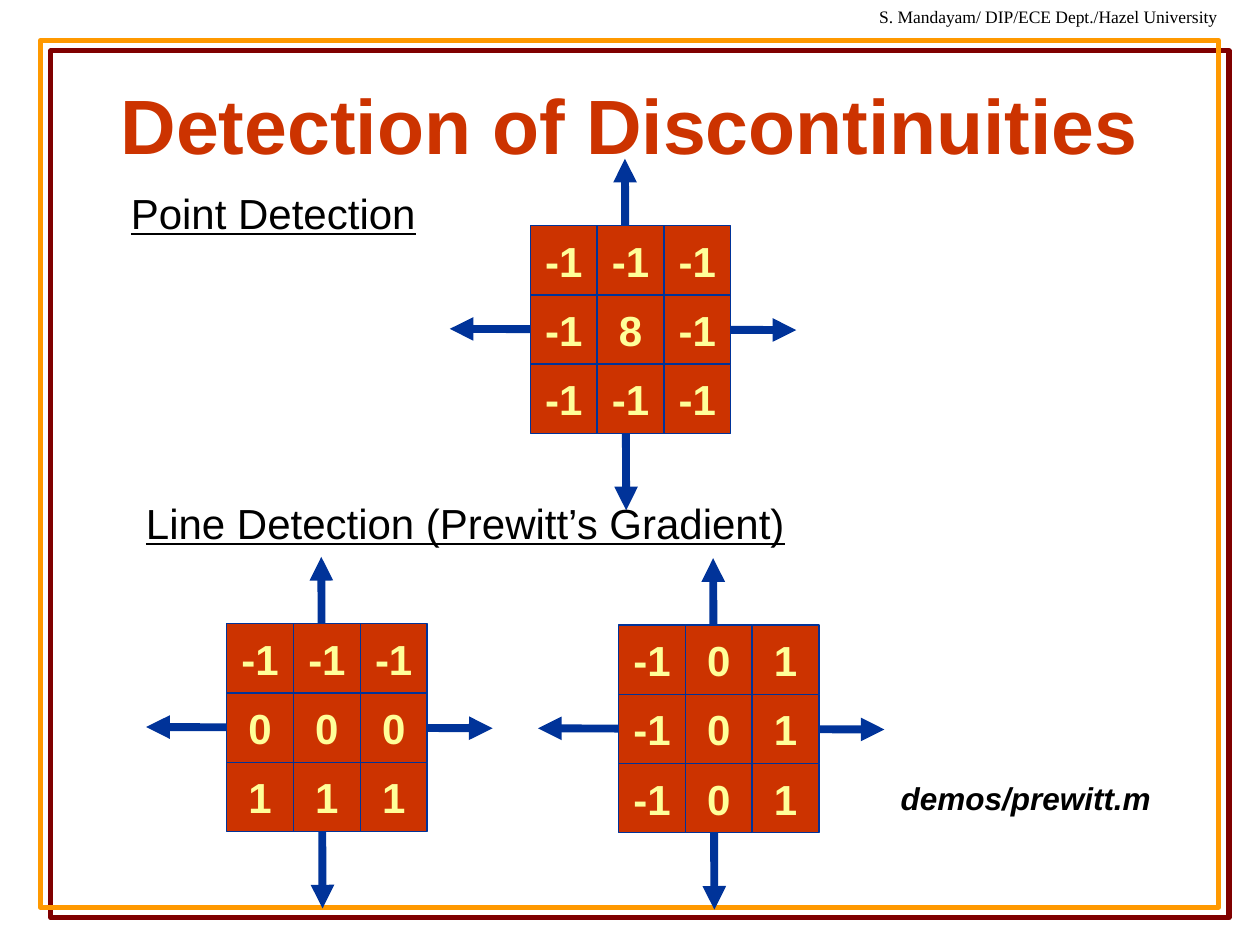
from dataclasses import dataclass

from lxml.etree import SubElement
from pptx import Presentation
from pptx.dml.color import RGBColor
from pptx.enum.shapes import MSO_CONNECTOR, MSO_SHAPE
from pptx.enum.text import MSO_ANCHOR, MSO_AUTO_SIZE, PP_ALIGN
from pptx.oxml.ns import qn
from pptx.util import Inches, Pt


@dataclass(frozen=True)
class Theme:
    accent: str = "CC3300"
    digit: str = "FFFF99"
    axis: str = "003399"
    ink: str = "000000"
    frame: str = "FF9900"
    frame_shadow: str = "800000"
    sans: str = "Arial"
    serif: str = "Times New Roman"
    title: float = 44
    body: float = 24
    note: float = 18
    credit: float = 10


def write(tf, text, font, size, color, align=PP_ALIGN.LEFT, anchor=MSO_ANCHOR.TOP,
          wrap=False, bold=False, italic=False, underline=False, indent=0):
    tf.word_wrap = wrap
    tf.vertical_anchor = anchor
    p = tf.paragraphs[0]
    p.alignment = align
    if indent:
        p._p.get_or_add_pPr().set("marL", str(Inches(indent)))
    r = p.add_run()
    r.text = text
    r.font.name = font
    r.font.size = Pt(size)
    r.font.color.rgb = RGBColor.from_string(color)
    r.font.bold = bold
    r.font.italic = italic
    r.font.underline = underline


class SlideBuilder:
    cell_w, cell_h = 0.53, 0.55

    def __init__(self, slide, theme):
        self.s = slide
        self.theme = theme

    def frame(self, left, top, width, height):
        t = self.theme
        sp = self.s.shapes.add_shape(MSO_SHAPE.RECTANGLE, Inches(left), Inches(top),
                                     Inches(width), Inches(height))
        sp.fill.background()
        sp.line.color.rgb = RGBColor.from_string(t.frame)
        sp.line.width = Pt(3)
        effects = SubElement(sp._element.spPr, qn("a:effectLst"))
        shadow = SubElement(effects, qn("a:outerShdw"), dist=str(Pt(8.5)),
                            dir="2700000", algn="ctr", rotWithShape="0")
        SubElement(shadow, qn("a:srgbClr"), val=t.frame_shadow)

    def title(self, text, left, top, width, height):
        t = self.theme
        sp = self.s.shapes.title
        sp.left, sp.top, sp.width, sp.height = map(Inches, (left, top, width, height))
        write(sp.text_frame, text, t.sans, t.title, t.accent, align=PP_ALIGN.CENTER,
              anchor=MSO_ANCHOR.MIDDLE, wrap=True, bold=True)
        sp.text_frame.auto_size = MSO_AUTO_SIZE.NONE

    def text(self, text, left, top, width, height, size, font=None, **fmt):
        t = self.theme
        tf = self.s.shapes.add_textbox(Inches(left), Inches(top),
                                       Inches(width), Inches(height)).text_frame
        write(tf, text, font or t.sans, size, t.ink, **fmt)
        tf.auto_size = MSO_AUTO_SIZE.SHAPE_TO_FIT_TEXT

    def axis(self, shapes, x1, y1, x2, y2):
        line = shapes.add_connector(MSO_CONNECTOR.STRAIGHT, Inches(x1), Inches(y1),
                                    Inches(x2), Inches(y2))
        line.line.color.rgb = RGBColor.from_string(self.theme.axis)
        line.line.width = Pt(4.5)
        ln = line.line._get_or_add_ln()
        for end in ("a:headEnd", "a:tailEnd"):
            SubElement(ln, qn(end), type="triangle")
        SubElement(line._element.spPr, qn("a:effectLst"))

    def cell(self, shapes, text, left, top):
        t = self.theme
        sp = shapes.add_shape(MSO_SHAPE.RECTANGLE, Inches(left), Inches(top),
                              Inches(self.cell_w), Inches(self.cell_h))
        sp.shadow.inherit = False
        sp.fill.solid()
        sp.fill.fore_color.rgb = RGBColor.from_string(t.accent)
        sp.line.color.rgb = RGBColor.from_string(t.axis)
        sp.line.width = Pt(0.75)
        write(sp.text_frame, text, t.sans, t.body, t.digit, align=PP_ALIGN.CENTER,
              anchor=MSO_ANCHOR.MIDDLE, bold=True)

    def kernel(self, rows, left, top):
        shapes = self.s.shapes.add_group_shape().shapes
        self.axis(shapes, left + 0.75, top - 0.53, left + 0.76, top + 2.26)
        self.axis(shapes, left - 0.64, top + 0.82, left + 2.11, top + 0.83)
        for i, row in enumerate(rows):
            for j, value in enumerate(row):
                self.cell(shapes, str(value), left + j * self.cell_w,
                          top + i * self.cell_h)


def main():
    prs = Presentation()
    prs.slide_width, prs.slide_height = Inches(10), Inches(7.5)
    theme = Theme()
    b = SlideBuilder(prs.slides.add_slide(prs.slide_layouts[5]), theme)

    b.frame(0.32, 0.32, 9.35, 6.88)
    b.text("S. Mandayam/ DIP/ECE Dept./Hazel University", 6.88, 0, 2.97, 0.27,
           theme.credit, font=theme.serif)
    b.title("Detection of Discontinuities", 0.75, 0.67, 8.5, 0.62)

    b.kernel([(-1, -1, -1), (0, 0, 0), (1, 1, 1)], 1.8, 4.95)
    b.text("Point Detection", 0.94, 1.44, 2.46, 0.5, theme.body, underline=True)
    b.kernel([(-1, 0, 1)] * 3, 4.91, 4.96)
    b.kernel([(-1, -1, -1), (-1, 8, -1), (-1, -1, -1)], 4.21, 1.79)
    b.text("Line Detection (Prewitt’s Gradient)", 1.06, 3.9, 5.28, 0.5,
           theme.body, underline=True)
    b.text("demos/prewitt.m", 6.55, 6.13, 3.21, 0.4, theme.note,
           wrap=True, bold=True, italic=True, indent=0.5)

    prs.save("out.pptx")


if __name__ == "__main__":
    main()
